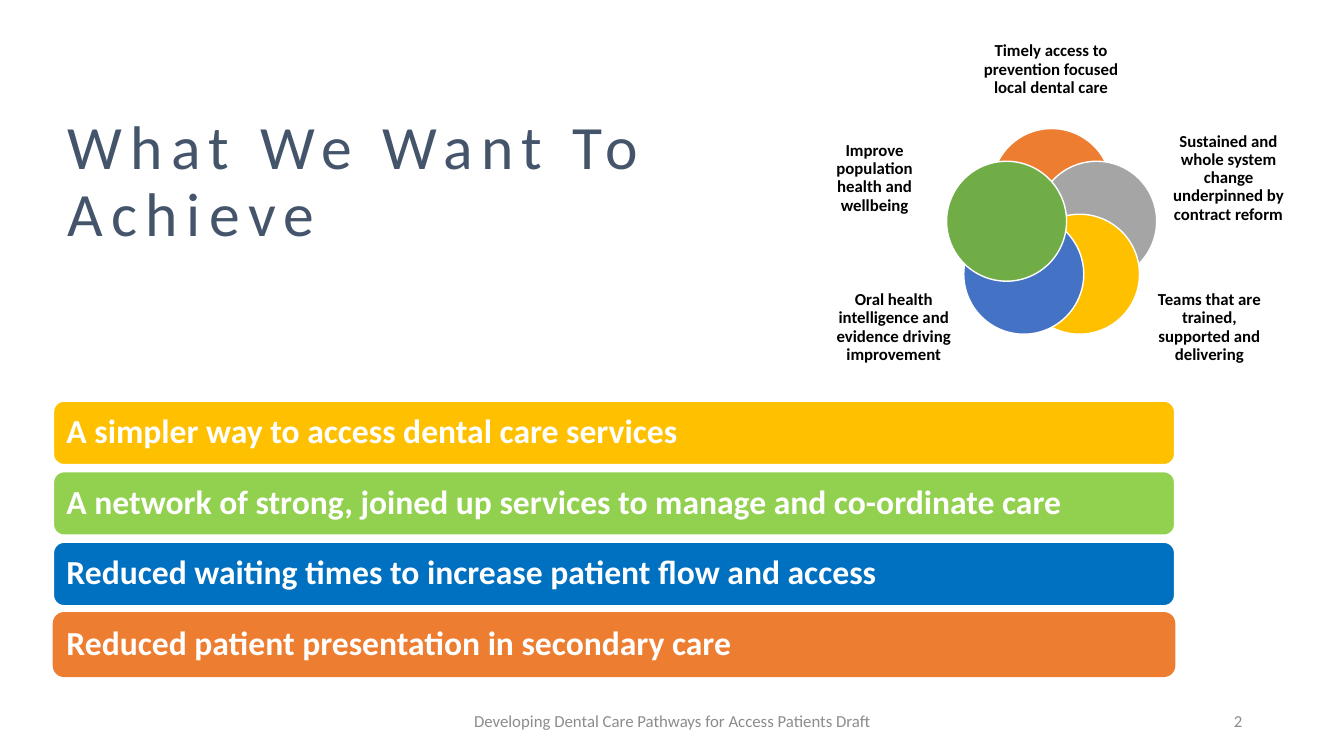
from dataclasses import dataclass
from math import cos, radians, sin

from pptx import Presentation
from pptx.dml.color import RGBColor
from pptx.enum.shapes import MSO_SHAPE as Preset
from pptx.enum.text import MSO_ANCHOR as Anchor, PP_ALIGN as Align
from pptx.shapes.autoshape import Shape
from pptx.slide import Slide
from pptx.util import Inches, Pt

COLOURS = {
    "title": "44546A",
    "footer": "8C8C8C",
    "white": "FFFFFF",
    "black": "000000",
    "gold": "FFC000",
    "lime": "92D050",
    "azure": "0070C0",
    "orange": "ED7D31",
    "grey": "A5A5A5",
    "blue": "4472C4",
    "green": "70AD47",
}
FONT = "Calibri"

BAR_LEFT, BAR_TOP, BAR_PITCH = 0.53, 3.98, 0.7
BAR_WIDTH, BAR_HEIGHT = 11.12, 0.63

RING_X, RING_Y, RING_RADIUS = 10.43, 2.34, 0.47
CIRCLE_SIZE = 1.19


@dataclass(frozen=True)
class Box:
    left: float
    top: float
    width: float
    height: float

    def lengths(self) -> tuple[int, int, int, int]:
        return (Inches(self.left), Inches(self.top),
                Inches(self.width), Inches(self.height))


@dataclass(frozen=True)
class Goal:
    wording: str
    fill: str
    outline: str = "white"


@dataclass(frozen=True)
class Theme:
    wording: str
    fill: str
    label: Box


@dataclass(frozen=True)
class FooterItem:
    wording: str
    box: Box
    align: Align


GOALS = [
    Goal("A simpler way to access dental care services", "gold"),
    Goal("A network of strong, joined up services to manage and co-ordinate care", "lime"),
    Goal("Reduced waiting times to increase patient flow and access", "azure"),
    Goal("Reduced patient presentation in secondary care", "orange", "orange"),
]

THEMES = [
    Theme("Timely access to prevention focused local dental care", "orange",
          Box(9.74, 0.29, 1.37, 0.8)),
    Theme("Sustained and whole system change underpinned by contract reform", "grey",
          Box(11.57, 1.34, 1.23, 0.86)),
    Theme("Teams that are trained, supported and delivering", "gold",
          Box(11.38, 2.82, 1.23, 0.86)),
    Theme("Oral health intelligence and evidence driving improvement", "blue",
          Box(8.25, 2.82, 1.23, 0.86)),
    Theme("Improve population health and wellbeing", "green",
          Box(8.06, 1.34, 1.23, 0.86)),
]

FOOTER = [
    FooterItem("Developing Dental Care Pathways for Access Patients Draft",
               Box(4.42, 6.95, 4.5, 0.4), Align.CENTER),
    FooterItem("2", Box(9.42, 6.95, 3, 0.4), Align.RIGHT),
]


def rgb(name: str) -> RGBColor:
    return RGBColor.from_string(COLOURS[name])


def write(holder: Shape, wording: str, size: float, colour: str, align: Align,
          bold: bool = False, line_spacing: float = 0.9,
          inset_x: float = 0.1, inset_y: float = 0.05) -> None:
    frame = holder.text_frame
    frame.text = wording
    frame.word_wrap = True
    frame.vertical_anchor = Anchor.MIDDLE
    frame.margin_left = frame.margin_right = Inches(inset_x)
    frame.margin_top = frame.margin_bottom = Inches(inset_y)
    paragraph = frame.paragraphs[0]
    paragraph.alignment = align
    paragraph.line_spacing = line_spacing
    font = paragraph.runs[0].font
    font.name = FONT
    font.size = Pt(size)
    font.bold = bold
    font.color.rgb = rgb(colour)


def add_filled(slide: Slide, preset: Preset, box: Box, fill: str, outline: str) -> Shape:
    shape = slide.shapes.add_shape(preset, *box.lengths())
    shape.shadow.inherit = False
    shape.fill.solid()
    shape.fill.fore_color.rgb = rgb(fill)
    shape.line.color.rgb = rgb(outline)
    shape.line.width = Pt(1)
    return shape


def add_title(slide: Slide) -> None:
    title = slide.shapes.title
    title.left, title.top, title.width, title.height = Box(0.57, 1.09, 6.69, 1.45).lengths()
    write(title, "What We Want To Achieve", 44, "title", Align.LEFT)
    run = title.text_frame.paragraphs[0].runs[0]
    run.font._element.set("spc", "600")


def add_goal(slide: Slide, row: int, goal: Goal) -> None:
    box = Box(BAR_LEFT, BAR_TOP + row * BAR_PITCH, BAR_WIDTH, BAR_HEIGHT)
    bar = add_filled(slide, Preset.ROUNDED_RECTANGLE, box, goal.fill, goal.outline)
    write(bar, goal.wording, 24, "white", Align.LEFT, bold=True)


def add_theme(slide: Slide, position: int, theme: Theme) -> None:
    angle = radians(position * 360 / len(THEMES))
    left = RING_X + RING_RADIUS * sin(angle) - CIRCLE_SIZE / 2
    top = RING_Y - RING_RADIUS * cos(angle) - CIRCLE_SIZE / 2
    add_filled(slide, Preset.OVAL, Box(left, top, CIRCLE_SIZE, CIRCLE_SIZE),
               theme.fill, "white")
    label = slide.shapes.add_textbox(*theme.label.lengths())
    write(label, theme.wording, 12, "black", Align.CENTER, bold=True, inset_x=0, inset_y=0)


def add_footer_item(slide: Slide, item: FooterItem) -> None:
    holder = slide.shapes.add_textbox(*item.box.lengths())
    write(holder, item.wording, 12, "footer", item.align, line_spacing=1.0)


def main() -> None:
    deck = Presentation()
    deck.slide_width, deck.slide_height = Inches(13.33), Inches(7.5)
    slide = deck.slides.add_slide(deck.slide_layouts[5])
    add_title(slide)
    for row, goal in enumerate(GOALS):
        add_goal(slide, row, goal)
    for position, theme in enumerate(THEMES):
        add_theme(slide, position, theme)
    for item in FOOTER:
        add_footer_item(slide, item)
    deck.save("out.pptx")


if __name__ == "__main__":
    main()
